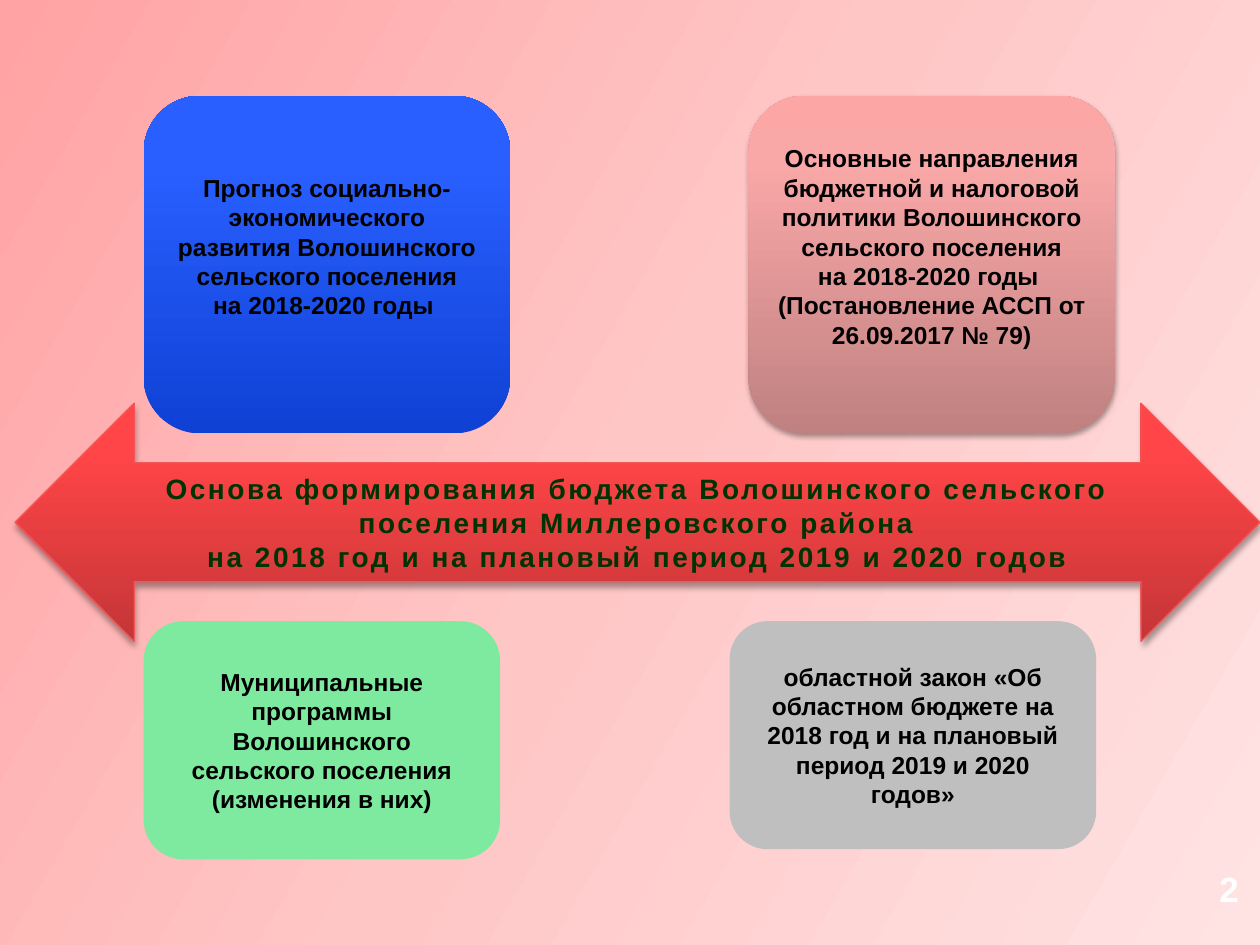
from copy import deepcopy
from dataclasses import dataclass

from lxml import etree
from pptx import Presentation
from pptx.dml.color import RGBColor
from pptx.enum.shapes import MSO_SHAPE as SHAPE
from pptx.enum.text import MSO_ANCHOR as ANCHOR, PP_ALIGN as ALIGN
from pptx.oxml.ns import qn
from pptx.util import Inches, Pt

COLS, ROWS = 100, 75


@dataclass(frozen=True)
class Theme:
    font: str = "Arial"
    box_size: int = 14
    banner_size: int = 16
    number_size: int = 20
    black: str = "000000"
    white: str = "FFFFFF"
    banner_text: str = "003300"
    banner_line: str = "EF5759"
    green: str = "7EEA9F"
    grey: str = "BFBFBF"
    # Gradients: (position, colour) stops
    page: tuple = ((0, "FFA3A4"), (0.5, "FFC6C6"), (1, "FFE3E3"))
    blue: tuple = ((0, "0F41D5"), (0.8, "295FFF"), (1, "2B60FF"))
    pink: tuple = ((0, "C08181"), (0.8, "F9A7A7"), (1, "FCA6A6"))
    red: tuple = ((0, "C43537"), (0.8, "FF4547"), (1, "FF4649"))


class Deck:
    def __init__(self, theme):
        self.t = theme
        self.prs = Presentation()
        self.prs.slide_width, self.prs.slide_height = Inches(10), Inches(7.5)
        self.s = None

    def slide(self):
        self.s = self.prs.slides.add_slide(self.prs.slide_layouts[6])
        self.gradient(self.s.background.fill, self.s.element, self.t.page, -30)

    def place(self, col, row, cols, rows):
        """Turn grid units into lengths."""
        w, h = self.prs.slide_width / COLS, self.prs.slide_height / ROWS
        return [round(v) for v in (col * w, row * h, cols * w, rows * h)]

    def gradient(self, fill, element, stops, angle):
        fill.gradient()
        fill.gradient_angle = angle % 360
        gs_list = element.find(".//" + qn("a:gsLst"))
        while len(gs_list) < len(stops):
            gs_list.append(deepcopy(gs_list[0]))
        for stop, (position, color) in zip(fill.gradient_stops, stops):
            stop.position = position
            stop.color.rgb = RGBColor.from_string(color)

    def shadow(self, sp):
        effects = sp.element.spPr.find(qn("a:effectLst"))
        outer = etree.SubElement(effects, qn("a:outerShdw"), blurRad=str(Pt(3.1)),
                                 dist=str(Pt(1.8)), dir="5400000", rotWithShape="0")
        color = etree.SubElement(outer, qn("a:srgbClr"), val=self.t.black)
        etree.SubElement(color, qn("a:alpha"), val="35000")

    def text(self, tf, paragraphs, size, color, align=ALIGN.CENTER, spacing=0):
        """Write paragraphs; a line feed inside one is a line break."""
        tf.word_wrap = True
        tf.vertical_anchor = ANCHOR.MIDDLE
        for i, lines in enumerate(paragraphs):
            p = tf.add_paragraph() if i else tf.paragraphs[0]
            p.alignment = align
            for j, line in enumerate(lines.split("\n")):
                if j:
                    p.add_line_break()
                r = p.add_run()
                r.text = line
                r.font.name, r.font.size, r.font.bold = self.t.font, Pt(size), True
                r.font.color.rgb = RGBColor.from_string(color)
                if spacing:
                    r.font._element.set("spc", str(round(spacing * 100)))

    def shape(self, kind, at, fill, shadow=False):
        sp = self.s.shapes.add_shape(kind, *self.place(*at))
        sp.shadow.inherit = False
        sp.line.fill.background()
        if isinstance(fill, str):
            sp.fill.solid()
            sp.fill.fore_color.rgb = RGBColor.from_string(fill)
        else:
            self.gradient(sp.fill, sp.element, fill, 90)
        if shadow:
            self.shadow(sp)
        return sp

    def box(self, at, fill, paragraphs, shadow=False, bottom=0.05):
        sp = self.shape(SHAPE.ROUNDED_RECTANGLE, at, fill, shadow)
        sp.text_frame.margin_bottom = Inches(bottom)
        self.text(sp.text_frame, paragraphs, self.t.box_size, self.t.black)

    def banner(self, at, fill, paragraphs):
        sp = self.shape(SHAPE.LEFT_RIGHT_ARROW, at, fill, shadow=True)
        sp.line.color.rgb = RGBColor.from_string(self.t.banner_line)
        sp.line.width = Pt(0.75)
        self.text(sp.text_frame, paragraphs, self.t.banner_size,
                  self.t.banner_text, spacing=1.5)

    def number(self, at, label):
        sp = self.s.shapes.add_textbox(*self.place(*at))
        self.text(sp.text_frame, [label], self.t.number_size, self.t.white, ALIGN.RIGHT)


def main():
    theme = Theme()
    deck = Deck(theme)
    deck.slide()

    left, top, lower, wide = 11.4, 7.6, 49.3, 29.1
    raised = 0.34  # bottom inset that lifts the text of the upper boxes

    # Upper boxes
    deck.box((left, top, wide, 26.8), theme.blue, [
        "Прогноз социально-экономического развития Волошинского сельского поселения",
        "на 2018-2020 годы ",
    ], bottom=raised)
    deck.box((59.4, top, wide, 26.8), theme.pink, [
        "Основные направления бюджетной и налоговой политики "
        "Волошинского сельского поселения",
        "на 2018-2020 годы ",
        "(Постановление АССП от 26.09.2017 № 79)",
    ], shadow=True, bottom=raised)

    # Lower boxes
    deck.box((left, lower, 28.3, 18.9), theme.green, [
        "Муниципальные программы Волошинского сельского поселения",
        "(изменения в них)",
    ])
    deck.box((57.9, lower, wide, 18.1), theme.grey, [
        "областной закон «Об областном бюджете на 2018 год "
        "и на плановый период 2019 и 2020 годов»",
    ])

    # Central arrow
    deck.banner((1.2, 32, 98.8, 18.9), theme.red, [
        "Основа формирования бюджета Волошинского сельского поселения "
        "Миллеровского района\nна 2018 год и на плановый период 2019 и 2020 годов",
    ])

    # Slide number
    deck.number((93, 68, 6.3, 5), "2")

    deck.prs.save("out.pptx")


if __name__ == "__main__":
    main()
